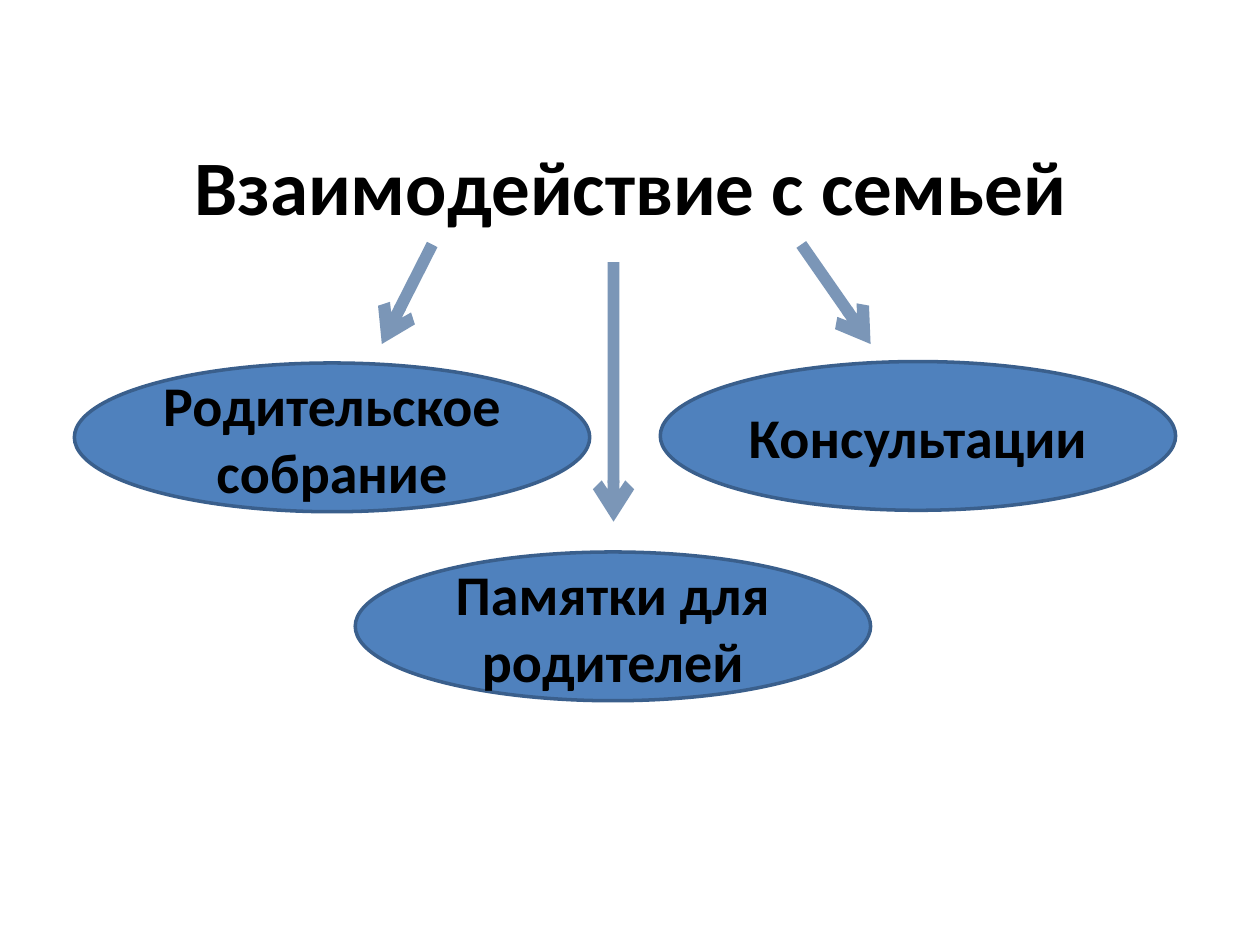
from lxml import etree
from pptx import Presentation
from pptx.dml.color import RGBColor
from pptx.enum import shapes, text
from pptx.oxml import ns
from pptx.util import Pt

BLACK = RGBColor(0x00, 0x00, 0x00)
BLUE = RGBColor(0x4F, 0x81, 0xBD)
OUTLINE = RGBColor(0x3A, 0x5F, 0x8C)
ARROW = RGBColor(0x37, 0x60, 0x92)
OVAL_W, OVAL_H = 294.5, 85


def set_text(sp, words, size):
    """Write bold centred text in the middle of a shape."""
    tf = sp.text_frame
    tf.word_wrap = True
    tf.vertical_anchor = text.MSO_ANCHOR.MIDDLE
    p = tf.paragraphs[0]
    p.text = words
    p.alignment = text.PP_ALIGN.CENTER
    font = p.runs[0].font
    font.name, font.size, font.bold = "Calibri", Pt(size), True
    font.color.rgb = BLACK


def add_title(s, x, y, w, h, words):
    """Place the heading in the given box."""
    set_text(s.shapes.add_textbox(Pt(x), Pt(y), Pt(w), Pt(h)), words, 44)


def add_oval(s, x, y, words):
    """Place one form of family work as a labelled oval."""
    sp = s.shapes.add_shape(shapes.MSO_SHAPE.OVAL, Pt(x), Pt(y), Pt(OVAL_W), Pt(OVAL_H))
    sp.shadow.inherit = False
    sp.fill.solid()
    sp.fill.fore_color.rgb = BLUE
    sp.line.color.rgb = OUTLINE
    sp.line.width = Pt(2)
    set_text(sp, words, 32)


def add_arrow(s, x1, y1, x2, y2):
    """Draw a thick translucent arrow between two points."""
    line = s.shapes.add_connector(shapes.MSO_CONNECTOR.STRAIGHT, Pt(x1), Pt(y1), Pt(x2), Pt(y2))
    line.line.color.rgb = ARROW
    line.line.width = Pt(6.75)
    ln = line.line._get_or_add_ln()
    color = ln.find(".//" + ns.qn("a:srgbClr"))
    etree.SubElement(color, ns.qn("a:alpha"), val="66000")
    etree.SubElement(ln, ns.qn("a:tailEnd"), type="arrow")
    etree.SubElement(line._element.spPr, ns.qn("a:effectLst"))


def add_family_diagram(s, x, y):
    """Place the ovals and the arrows that lead to them."""
    for dx, dy, words in (
        (0, 67.7, "Родительское собрание"),
        (334.8, 66.9, "Консультации"),
        (160.5, 175.7, "Памятки для родителей"),
    ):
        add_oval(s, x + dx, y + dy, words)
    for x1, y1, x2, y2 in (
        (204.5, 0, 175.7, 56.9),
        (415.4, 0, 455, 56.9),
        (308.1, 10.1, 308.1, 158.4),
    ):
        add_arrow(s, x + x1, y + y1, x + x2, y + y2)


def main():
    """Build and save the slide."""
    prs = Presentation()
    prs.slide_width, prs.slide_height = Pt(720), Pt(540)
    s = prs.slides.add_slide(prs.slide_layouts[6])
    add_title(s, 36.7, 60.5, 648, 90, "Взаимодействие с семьей")
    add_family_diagram(s, 42.5, 139.7)
    prs.save("out.pptx")


if __name__ == "__main__":
    main()
